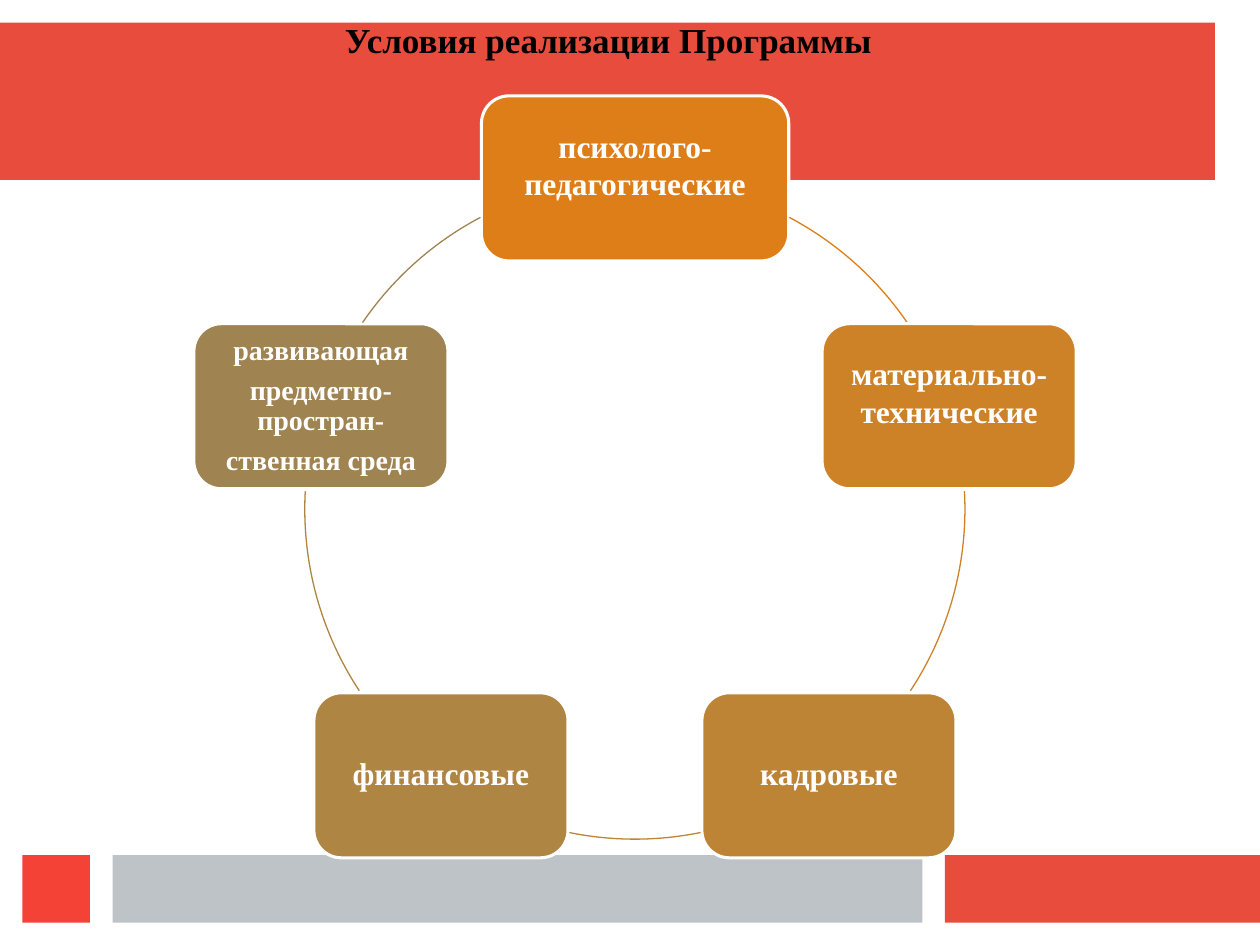
from pptx import Presentation
from pptx.dml.color import RGBColor
from pptx.enum.shapes import MSO_SHAPE as Preset
from pptx.enum.text import MSO_ANCHOR as Anchor, PP_ALIGN as Align
from pptx.util import Pt

FONT = "Times New Roman"
WHITE = RGBColor(0xFF, 0xFF, 0xFF)
BLACK = RGBColor(0x00, 0x00, 0x00)
CORAL = RGBColor(0xE7, 0x4C, 0x3C)
RED = RGBColor(0xF4, 0x43, 0x36)
GRAY = RGBColor(0xBD, 0xC3, 0xC7)
ORANGE = RGBColor(0xDE, 0x7E, 0x18)
AMBER = RGBColor(0xCE, 0x82, 0x27)
OCHRE = RGBColor(0xBE, 0x84, 0x35)
SAND = RGBColor(0xAE, 0x85, 0x43)
KHAKI = RGBColor(0x9F, 0x83, 0x51)

deck = Presentation()
deck.slide_width, deck.slide_height = Pt(720), Pt(540)
page = deck.slides.add_slide(deck.slide_layouts[6])


def add_block(preset, left, top, width, height, fill):
    block = page.shapes.add_shape(preset, Pt(left), Pt(top), Pt(width), Pt(height))
    block.shadow.inherit = False
    block.fill.solid()
    block.fill.fore_color.rgb = fill
    block.line.fill.background()
    return block


def add_span(para, text, size, color):
    span = para.add_run()
    span.text = text
    span.font.name = FONT
    span.font.size = Pt(size)
    span.font.bold = True
    span.font.color.rgb = color


BANDS = [
    (0, 12.86, 694.3, 90, CORAL),
    (540, 488.6, 180, 38.6, CORAL),
    (64.3, 488.6, 462.8, 38.6, GRAY),
    (12.86, 488.6, 38.6, 38.6, RED),
]
for left, top, width, height, color in BANDS:
    add_block(Preset.RECTANGLE, left, top, width, height, color)

title = page.shapes.add_textbox(Pt(190), Pt(7.2), Pt(360), Pt(31)).text_frame
title.word_wrap = True
add_span(title.paragraphs[0], "Условия реализации Программы", 20, BLACK)

CENTER_X, CENTER_Y, RADIUS = 362.8, 290.9, 188.6
NODE_HEIGHT = 94.3
NODES = [
    (275.1, 54.8, 175.6, ORANGE, 18, 1, 16, ["психолого-педагогические"], 297.9, 325.6),
    (469.8, 185, 145.2, AMBER, 18, 1, 16, ["материально-технические"], 356.9, 33.4),
    (401.1, 395.9, 145.2, OCHRE, 18, 0.9, 0, ["кадровые"], 78.5, 101.5),
    (179.4, 395.9, 145.2, SAND, 18, 0.9, 0, ["финансовые"], 146.6, 183.1),
    (110.8, 185, 145.2, KHAKI, 16, 0.9, 0,
     ["развивающая", "предметно-простран-", "ственная среда"], 214.4, 242.1),
]
for left, top, width, color, size, spacing, lift, lines, start, end in NODES:
    node = add_block(Preset.ROUNDED_RECTANGLE, left, top, width, NODE_HEIGHT, color)
    node.line.color.rgb = WHITE
    node.line.width = Pt(1.75)
    frame = node.text_frame
    frame.word_wrap = True
    frame.vertical_anchor = Anchor.MIDDLE
    frame.margin_left = frame.margin_right = frame.margin_top = Pt(5)
    frame.margin_bottom = Pt(5 + lift)
    for index, line in enumerate(lines):
        para = frame.add_paragraph() if index else frame.paragraphs[0]
        para.alignment = Align.CENTER
        para.line_spacing = spacing
        para.space_after = Pt(0.35 * size)
        add_span(para, line, size, WHITE)

    arc = page.shapes.add_shape(
        Preset.ARC, Pt(CENTER_X - RADIUS), Pt(CENTER_Y - RADIUS), Pt(2 * RADIUS), Pt(2 * RADIUS))
    arc.shadow.inherit = False
    arc.fill.background()
    arc.line.color.rgb = color
    arc.line.width = Pt(0.75)
    arc.adjustments[0] = start * 0.6
    arc.adjustments[1] = end * 0.6

deck.save("out.pptx")
